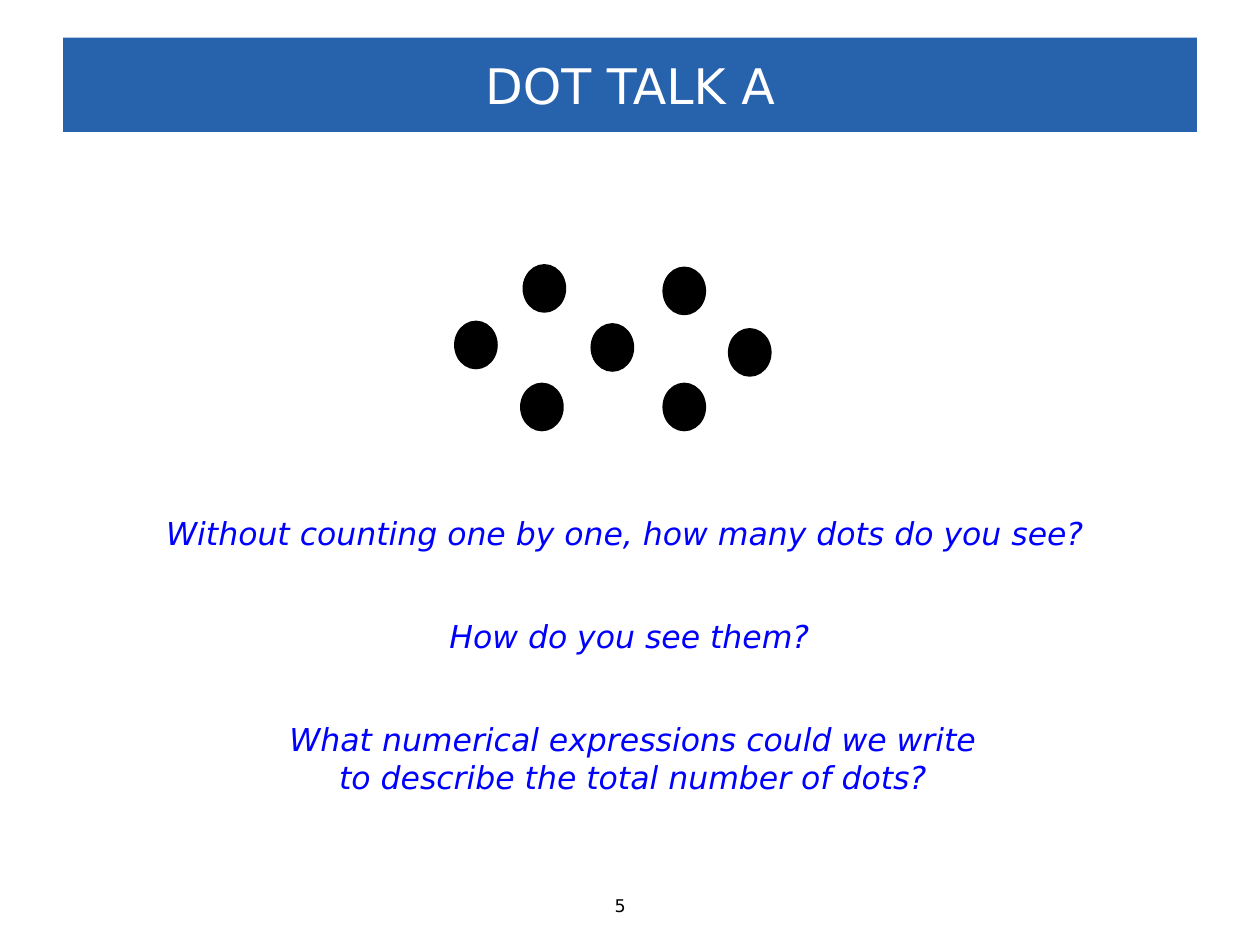
"""Build the Dot Talk A slide."""
import dataclasses

import pptx
import pptx.dml.color
import pptx.enum.shapes
import pptx.enum.text
import pptx.util

Cm = pptx.util.Cm
Align = pptx.enum.text.PP_ALIGN


@dataclasses.dataclass(frozen=True)
class Theme:
    font: str = "DejaVu Sans"
    banner: str = "2762AD"
    title: str = "FFFFFF"
    question: str = "0000FF"
    ink: str = "000000"
    title_size: int = 28
    question_size: int = 18
    number_size: int = 10
    dot_line: int = 2


THEME = Theme()
DOT_SIZE = (0.81, 0.91)
DOTS = [
    (9.19, 6.5), (10.57, 5.36), (10.52, 7.75), (11.94, 6.55),
    (13.39, 5.41), (13.39, 7.75), (14.71, 6.65),
]
QUESTIONS = [
    ("Without counting one by one, how many dots do you see?",
     (3.1, 10.24, 19.33, 1.02), Align.LEFT),
    ("How do you see them?", (8.81, 12.32, 7.9, 1.02), Align.LEFT),
    ("What numerical expressions could we write to describe the total number of dots?",
     (5.28, 14.4, 14.96, 1.8), Align.CENTER),
]


def rgb(value):
    """Return a colour object for a hex string."""
    return pptx.dml.color.RGBColor.from_string(value)


def set_text(box, text, size, color, align, italic=False):
    """Write one formatted paragraph into a box."""
    frame = box.text_frame
    frame.text = text
    frame.word_wrap = True
    frame.auto_size = pptx.enum.text.MSO_AUTO_SIZE.NONE
    paragraph = frame.paragraphs[0]
    paragraph.alignment = align
    for span in paragraph.runs:
        span.font.name = THEME.font
        span.font.size = pptx.util.Pt(size)
        span.font.italic = italic
        span.font.color.rgb = rgb(color)


def add_label(page, text, bounds, size, color, align, italic=False):
    """Add a text box at the given bounds in centimetres."""
    box = page.shapes.add_textbox(*map(Cm, bounds))
    set_text(box, text, size, color, align, italic)


def set_title(page, text):
    """Turn the title placeholder into the banner."""
    title = page.shapes.title
    title.left, title.top, title.width, title.height = map(Cm, (1.27, 0.76, 22.86, 1.9))
    title.fill.solid()
    title.fill.fore_color.rgb = rgb(THEME.banner)
    set_text(title, text, THEME.title_size, THEME.title, Align.CENTER)
    title.text_frame.vertical_anchor = pptx.enum.text.MSO_ANCHOR.MIDDLE


def add_dots(page):
    """Add the group of dots to count."""
    group = page.shapes.add_group_shape()
    for position in DOTS:
        dot = group.shapes.add_shape(
            pptx.enum.shapes.MSO_SHAPE.OVAL, *map(Cm, position + DOT_SIZE))
        dot.shadow.inherit = False
        dot.fill.solid()
        dot.fill.fore_color.rgb = rgb(THEME.ink)
        dot.line.color.rgb = rgb(THEME.ink)
        dot.line.width = pptx.util.Pt(THEME.dot_line)


def main():
    """Build and save the deck."""
    deck = pptx.Presentation()
    deck.slide_width, deck.slide_height = Cm(25.4), Cm(19.05)
    page = deck.slides.add_slide(deck.slide_layouts.get_by_name("Title Only"))
    set_title(page, "DOT TALK A")
    add_dots(page)
    for text, bounds, align in QUESTIONS:
        add_label(page, text, bounds, THEME.question_size, THEME.question, align, italic=True)
    add_label(page, "5", (12.14, 17.91, 1.12, 0.69), THEME.number_size, THEME.ink, Align.LEFT)
    deck.save("out.pptx")


if __name__ == "__main__":
    main()
